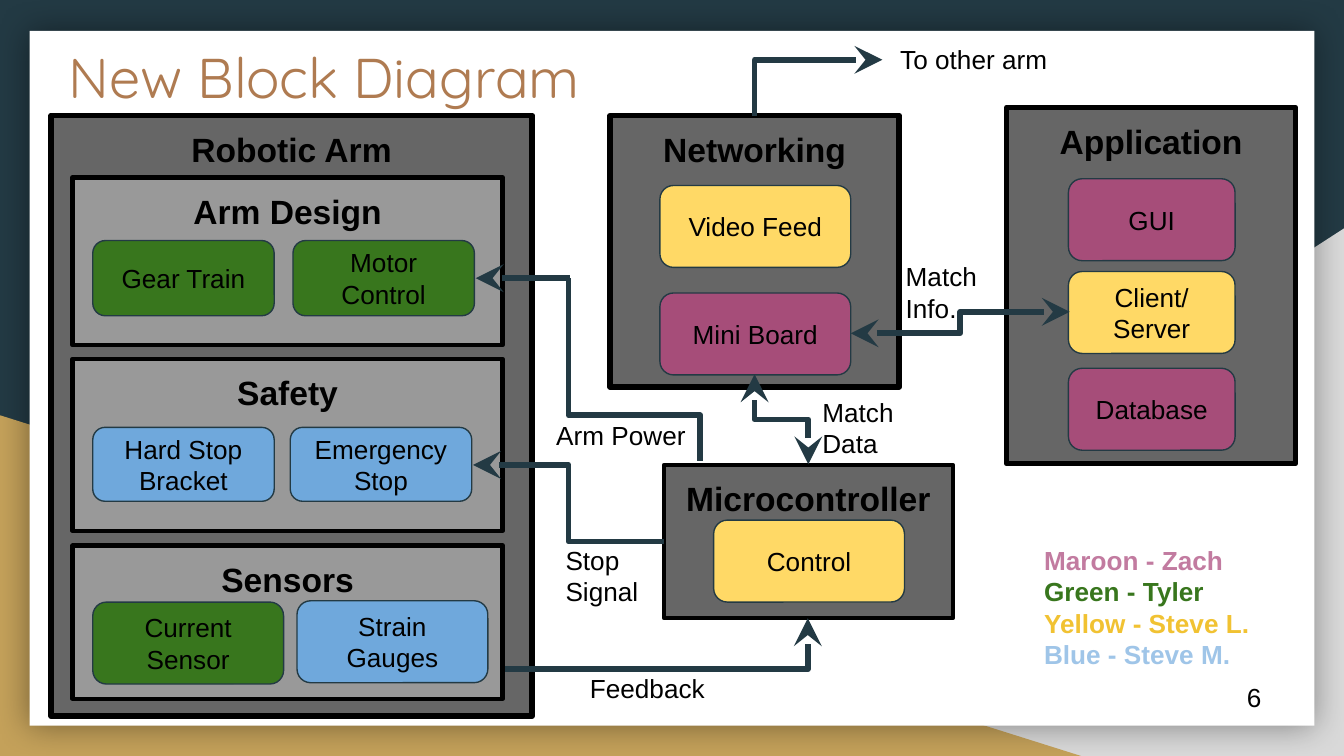
from lxml import etree
from pptx import Presentation
from pptx import util as u
from pptx.dml.color import RGBColor
from pptx.enum import shapes, text
from pptx.oxml import ns

PX = 9144
FONT, TITLE_FONT = "Arial", "Quicksand"
NAVY = RGBColor(0x23, 0x3A, 0x44)
LIGHT = RGBColor(0xD9, 0xD9, 0xD9)
GOLD = RGBColor(0xC4, 0xA1, 0x5A)
WHITE = RGBColor(0xFF, 0xFF, 0xFF)
BLACK = RGBColor(0x00, 0x00, 0x00)
BRONZE = RGBColor(0xAF, 0x7B, 0x51)
DARK_GRAY = RGBColor(0x66, 0x66, 0x66)
MID_GRAY = RGBColor(0x99, 0x99, 0x99)
GREEN = RGBColor(0x38, 0x76, 0x1D)
BLUE = RGBColor(0x6F, 0xA8, 0xDC)
YELLOW = RGBColor(0xFF, 0xD9, 0x66)
MAROON = RGBColor(0xA6, 0x4D, 0x79)
LEGEND = [
    ("Maroon - Zach", RGBColor(0xC2, 0x7B, 0xA0)),
    ("Green - Tyler", GREEN),
    ("Yellow - Steve L.", RGBColor(0xF1, 0xC2, 0x32)),
    ("Blue - Steve M.", RGBColor(0x9F, 0xC5, 0xE8)),
]
RECT = shapes.MSO_SHAPE.RECTANGLE
ROUND = shapes.MSO_SHAPE.ROUNDED_RECTANGLE
TRIANGLE = shapes.MSO_SHAPE.RIGHT_TRIANGLE
TOP, MIDDLE = text.MSO_ANCHOR.TOP, text.MSO_ANCHOR.MIDDLE
LEFT, CENTER = text.PP_ALIGN.LEFT, text.PP_ALIGN.CENTER


def emu(box):
    return [v * PX for v in box]


def write(tf, words, size=14, bold=False, color=BLACK, font=FONT, align=LEFT, anchor=TOP):
    tf.text = words
    tf.word_wrap = True
    tf.auto_size = text.MSO_AUTO_SIZE.NONE
    tf.vertical_anchor = anchor
    tf.margin_left = tf.margin_right = tf.margin_top = tf.margin_bottom = 10 * PX
    for p in tf.paragraphs:
        p.alignment = align
        for r in p.runs:
            r.font.name, r.font.size, r.font.bold = font, u.Pt(size), bold
            r.font.color.rgb = color


def add_shape(parent, kind, box, fill, line=None, width=0.75):
    sp = parent.add_shape(kind, *emu(box))
    sp.shadow.inherit = False
    sp.fill.solid()
    sp.fill.fore_color.rgb = fill
    if line is None:
        sp.line.fill.background()
    else:
        sp.line.color.rgb = line
        sp.line.width = u.Pt(width)
    return sp


def add_label(s, box, words, **style):
    sp = s.shapes.add_textbox(*emu(box))
    write(sp.text_frame, words, **style)
    return sp


def add_backdrop(s, w, h):
    s.background.fill.solid()
    s.background.fill.fore_color.rgb = NAVY
    right = add_shape(s.shapes, TRIANGLE, (392, 170, w - 392, h - 170), LIGHT)
    right._element.spPr.find(ns.qn("a:xfrm")).set("flipH", "1")
    add_shape(s.shapes, TRIANGLE, (0, 309, 806, h - 309), GOLD)
    panel = add_shape(s.shapes, RECT, (22, 23, w - 44, h - 46), WHITE)
    effects = panel._element.spPr.find(ns.qn("a:effectLst"))
    shadow = etree.SubElement(effects, ns.qn("a:outerShdw"),
                              blurRad=str(u.Pt(18)), dist="0", algn="ctr", rotWithShape="0")
    shade = etree.SubElement(shadow, ns.qn("a:srgbClr"), val=str(BLACK))
    etree.SubElement(shade, ns.qn("a:alpha"), val="40000")


def add_title(s, box, words):
    sp = s.shapes.title
    s.shapes._spTree.append(sp._element)
    sp.left, sp.top, sp.width, sp.height = emu(box)
    write(sp.text_frame, words, size=30, color=BRONZE, font=TITLE_FONT)


def add_block(s, box, heading, fill, width, size=(0, 0), parts=()):
    group = s.shapes.add_group_shape() if parts else s
    frame = add_shape(group.shapes, RECT, box, fill, BLACK, width)
    write(frame.text_frame, heading, size=18, bold=True, align=CENTER)
    for dx, dy, words, color in parts:
        place = (box[0] + dx, box[1] + dy, *size)
        sp = add_shape(group.shapes, ROUND, place, color, NAVY)
        write(sp.text_frame, words, align=CENTER, anchor=MIDDLE)


def add_wire(s, box, preset="bentConnector3", rot=0, flip=False, adj=50, ends=()):
    x, y, w, h = box
    c = s.shapes.add_connector(shapes.MSO_CONNECTOR.ELBOW, *emu((x, y, x + w, y + h)))
    c.line.color.rgb = NAVY
    c.line.width = u.Pt(3)
    props = c._element.spPr
    xfrm = props.find(ns.qn("a:xfrm"))
    xfrm.set("rot", str(rot * 60000))
    if flip:
        xfrm.set("flipH", "1")
    geom = props.find(ns.qn("a:prstGeom"))
    geom.set("prst", preset)
    if preset == "bentConnector3":
        guides = geom.find(ns.qn("a:avLst"))
        etree.SubElement(guides, ns.qn("a:gd"), name="adj1", fmla=f"val {adj * 1000}")
    for end in ends:
        etree.SubElement(props.find(ns.qn("a:ln")), ns.qn(f"a:{end}End"),
                         type="stealth", w="lg", len="lg")
    etree.SubElement(props, ns.qn("a:effectLst"))


def add_legend(s, box):
    sp = add_label(s, box, "\n".join(words for words, _ in LEGEND), bold=True)
    for p, (_, color) in zip(sp.text_frame.paragraphs, LEGEND):
        p.runs[0].font.color.rgb = color


def add_blocks(s):
    add_block(s, (38, 86, 358, 447), "Robotic Arm", DARK_GRAY, 3)
    add_block(s, (54, 132, 320, 125), "Arm Design", MID_GRAY, 2.25, (135, 56),
              [(15, 47, "Gear Train", GREEN), (164, 47, "Motor Control", GREEN)])
    add_block(s, (54, 267, 320, 128), "Safety", MID_GRAY, 2.25, (135, 55),
              [(15, 51, "Hard Stop Bracket", BLUE), (162, 51, "Emergency Stop", BLUE)])
    add_block(s, (54, 406, 320, 114), "Sensors", MID_GRAY, 2.25, (142, 61),
              [(15, 42, "Current Sensor", GREEN), (167, 41, "Strain Gauges", BLUE)])
    add_block(s, (494, 346, 215, 114), "Microcontroller", DARK_GRAY, 2.25, (142, 61),
              [(37, 41, "Control", YELLOW)])
    add_block(s, (454, 86, 215, 202), "Networking", DARK_GRAY, 3, (142, 61),
              [(37, 52, "Video Feed", YELLOW), (37, 132, "Mini Board", MAROON)])
    add_block(s, (749, 80, 215, 265), "Application", DARK_GRAY, 3, (124, 61),
              [(46, 53, "GUI", MAROON), (46, 122, "Client/\nServer", YELLOW),
               (46, 194, "Database", MAROON)])


def add_wires(s):
    both = ("head", "tail")
    add_wire(s, (376, 460, 225, 38), "bentConnector2", 180, True, ends=("tail",))
    add_wire(s, (352, 346, 142, 57), ends=("head",))
    add_wire(s, (548, 292, 67, 40), rot=90, flip=True, ends=both)
    add_wire(s, (588, 18, 42, 95), "bentConnector2", 270, ends=("tail",))
    add_wire(s, (354, 207, 70, 0), "line", ends=("head",))
    add_wire(s, (404, 226, 136, 98), rot=270, flip=True, adj=75)
    add_wire(s, (633, 232, 163, 16), rot=180, flip=True, ends=both)


def add_labels(s):
    for box, words in [
        ((660, 22, 130, 30), "To other arm"),
        ((429, 490, 215, 30), "Feedback"),
        ((411, 395, 83, 30), "Stop Signal"),
        ((404, 302, 117, 30), "Arm Power"),
        ((602, 285, 105, 30), "Match Data"),
        ((664, 184, 78, 30), "Match\nInfo."),
    ]:
        add_label(s, box, words)
    add_label(s, (918, 497, 60, 43), "6", anchor=MIDDLE)


def main():
    w, h = 1000, 563
    prs = Presentation()
    prs.slide_width = w * PX
    prs.slide_height = prs.slide_width * 9 // 16
    s = prs.slides.add_slide(prs.slide_layouts[5])
    add_backdrop(s, w, h)
    add_title(s, (41, 22, 932, 63), "New Block Diagram")
    add_blocks(s)
    add_legend(s, (767, 395, 182, 114))
    add_wires(s)
    add_labels(s)
    prs.save("out.pptx")


if __name__ == "__main__":
    main()
